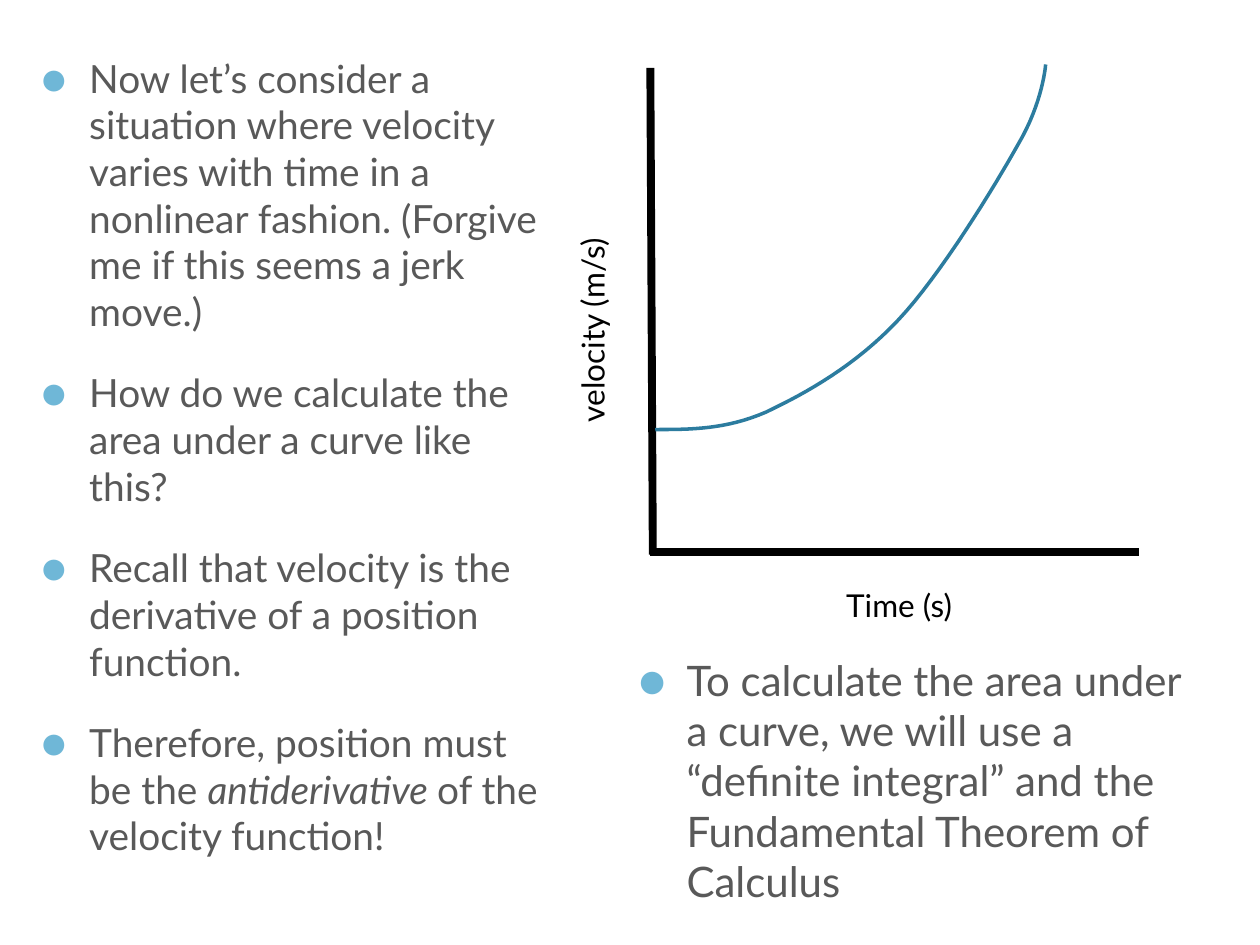
from dataclasses import dataclass

from lxml.etree import SubElement
from pptx import Presentation
from pptx.dml.color import RGBColor
from pptx.enum.shapes import MSO_CONNECTOR
from pptx.enum.text import MSO_AUTO_SIZE
from pptx.oxml.ns import qn
from pptx.util import Cm, Pt


@dataclass(frozen=True)
class Theme:
    font: str = "Lato"
    ink: str = "595959"
    black: str = "000000"
    dot: str = "6FB7D7"
    curve: str = "2C7C9F"
    body: float = 22.2
    note: float = 24
    label: float = 18
    gap: float = 20
    axis: float = 4.5
    stroke: float = 2


theme = Theme()

# Content: each paragraph is a list of (text, italic) runs
points = [
    [("Now let’s consider a situation where velocity varies with time in a "
      "nonlinear fashion. (Forgive me if this seems a jerk move.)", False)],
    [("How do we calculate the area under a curve like this?", False)],
    [("Recall that velocity is the derivative of a position function.", False)],
    [("Therefore, position must be the ", False), ("antiderivative ", True),
     ("of the velocity function!", False)],
]
note = [[("To calculate the area under a curve, we will use a “definite "
          "integral” and the Fundamental Theorem of Calculus", False)]]
labels = [  # text, box in cm, turn
    ("velocity (m/s)", (9.58, 5.89, 4.72, 1.02), 270),
    ("Time (s)", (16.81, 11.68, 2.69, 1.02), 0),
]

# Graph, in cm
axes = [(13.11, 1.37, 13.16, 11.18), (22.96, 11.13, 13.11, 11.13)]
start = (13.21, 8.66)
bends = [  # two handles and an end for each piece of the curve
    ((13.92, 8.66), (14.63, 8.66), (15.44, 8.31)),
    ((16.26, 7.92), (17.25, 7.37), (18.11, 6.45)),
    ((18.95, 5.56), (20.04, 3.78), (20.52, 2.92)),
    ((21.03, 2.06), (21.08, 1.3), (21.08, 1.3)),
]
steps = 16

deck = Presentation()
deck.slide_width, deck.slide_height = Cm(25.4), Cm(19.05)
slide = deck.slides.add_slide(deck.slide_layouts[6])


def add_dot(para):
    props = para._p.get_or_add_pPr()
    props.set("marL", str(Cm(0.97)))
    props.set("indent", str(-Cm(0.97)))
    tint = SubElement(props, qn("a:buClr"))
    SubElement(tint, qn("a:srgbClr"), val=theme.dot)
    SubElement(props, qn("a:buSzPct"), val="110000")
    SubElement(props, qn("a:buFont"), typeface=theme.font)
    SubElement(props, qn("a:buChar"), char="●")


def add_text(paras, box, size, color, dots=False, wrap=True, turn=0):
    shape = slide.shapes.add_textbox(*map(Cm, box))
    shape.rotation = turn
    frame = shape.text_frame
    frame.word_wrap = wrap
    frame.auto_size = MSO_AUTO_SIZE.NONE if wrap else MSO_AUTO_SIZE.SHAPE_TO_FIT_TEXT
    for i, runs in enumerate(paras):
        para = frame.add_paragraph() if i else frame.paragraphs[0]
        if dots:
            para.space_before = Pt(theme.gap)
            add_dot(para)
        for words, slant in runs:
            run = para.add_run()
            run.text = words
            font = run.font
            font.name, font.size, font.italic = theme.font, Pt(size), slant
            font.color.rgb = RGBColor.from_string(color)


def set_line(shape, color, width):
    shape.line.color.rgb = RGBColor.from_string(color)
    shape.line.width = Pt(width)


def trace(first, pieces):
    """Points along a chain of cubic curves."""
    for one, two, last in pieces:
        for i in range(1, steps + 1):
            t = i / steps
            u = 1 - t
            yield tuple(
                Cm(u**3 * a + 3 * u * u * t * b + 3 * u * t * t * c + t**3 * d)
                for a, b, c, d in zip(first, one, two, last))
        first = last


# Left column
add_text(points, (0.58, 0.97, 10.85, 17.6), theme.body, theme.ink, dots=True)

# Axes and their labels
for ends in axes:
    axis = slide.shapes.add_connector(MSO_CONNECTOR.STRAIGHT, *map(Cm, ends))
    set_line(axis, theme.black, theme.axis)
    SubElement(axis._element.spPr, qn("a:effectLst"))
for words, box, turn in labels:
    add_text([[(words, False)]], box, theme.label, theme.black, wrap=False, turn=turn)

# Velocity curve
pen = slide.shapes.build_freeform(*map(Cm, start))
pen.add_line_segments(trace(start, bends), close=False)
curve = pen.convert_to_shape()
curve.shadow.inherit = False
curve.fill.background()
set_line(curve, theme.curve, theme.stroke)

# Note under the graph
add_text(note, (12.62, 13.06, 11.58, 4.95), theme.note, theme.ink, dots=True)

deck.save("out.pptx")
